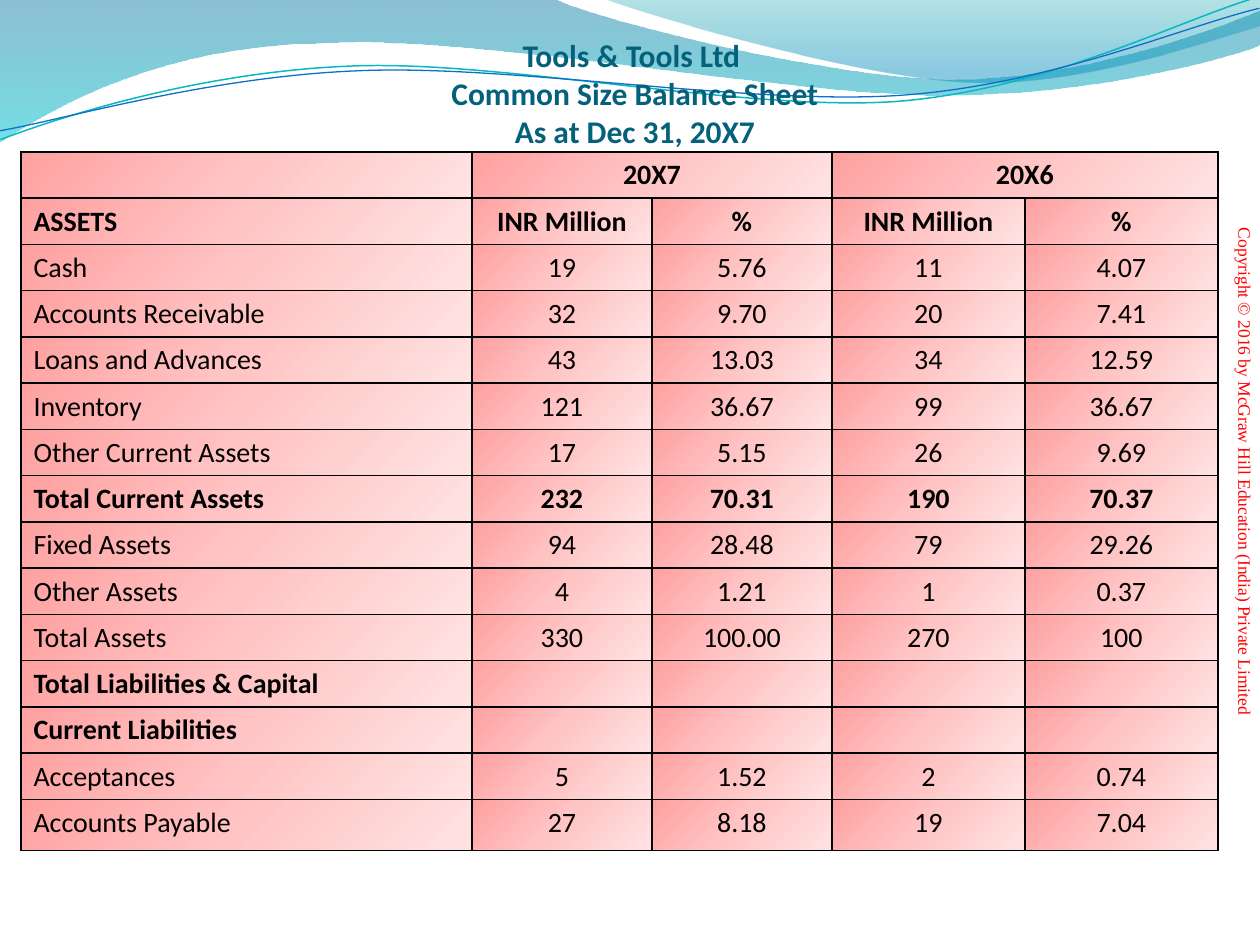
from dataclasses import dataclass

from lxml.etree import SubElement
from pptx import Presentation
from pptx.dml.color import RGBColor
from pptx.enum.text import MSO_ANCHOR, MSO_AUTO_SIZE, PP_ALIGN
from pptx.oxml.ns import qn
from pptx.util import Pt

PX = 914400 / 126


@dataclass(frozen=True)
class Theme:
    title: str = "04617B"
    text: str = "000000"
    copyright: str = "FF0000"
    teal_line: str = "0AB8BF"
    blue_line: str = "0F6FC6"
    # gradient stops: position %, colour, opacity %
    wide_wave: tuple = ((0, "0074A1", 45), (100, "00C6CF", 55))
    corner_wave: tuple = ((0, "00A1A9", 30), (80, "008BBF", 45))
    cell: tuple = ((0, "FFA0A0", 100), (50, "FFC5C5", 100), (100, "FFE3E3", 100))
    font: str = "Calibri"
    copyright_font: str = "Times New Roman"
    title_size: int = 18
    cell_size: int = 16
    copyright_size: int = 10


THEME = Theme()

# Each step is one point (straight) or three points (Bezier curve), in px.
WIDE_WAVE = [
    (0, 0), (554, -1),
    ((600, 21), (837, 79), (955, 79)), ((1075, 79), (1207, 33), (1260, 11)),
    (1261, 45),
    ((1239, 55), (1096, 96), (940, 95)), ((781, 95), (481, 35), (324, 43)),
    ((163, 45), (58, 105), (-1, 142)), (0, 0),
]
CORNER_WAVE = [
    (604, -1),
    ((641, 14), (859, 78), (969, 82)), ((1079, 87), (1211, 40), (1260, 26)),
    (1260, 0), (604, -1),
]
TEAL_LINE = [
    (-2, 110), ((59, 90), (199, 52), (350, 53)),
    ((499, 53), (745, 118), (896, 114)), ((1048, 109), (1184, 45), (1260, 27)),
]
BLUE_LINE = [
    (-2, 101), ((57, 94), (207, 57), (357, 58)),
    ((509, 58), (750, 112), (902, 108)), ((1052, 104), (1187, 52), (1262, 38)),
]
LINE_ROTATION = 357.3

TITLE = "Tools & Tools Ltd \nCommon Size Balance Sheet\nAs at Dec 31, 20X7"
COPYRIGHT = "Copyright © 2016 by McGraw Hill Education (India) Private Limited"
COLUMNS = [451, 180, 180, 193, 193]
ROW_HEIGHT, LAST_ROW_HEIGHT = 46, 51
BALANCE_SHEET = [
    ("", "20X7", "", "20X6", ""),
    ("ASSETS", "INR Million", "%", "INR Million", "%"),
    ("Cash", "19", "5.76", "11", "4.07"),
    ("Accounts Receivable", "32", "9.70", "20", "7.41"),
    ("Loans and Advances", "43", "13.03", "34", "12.59"),
    ("Inventory", "121", "36.67", "99", "36.67"),
    ("Other Current Assets", "17", "5.15", "26", "9.69"),
    ("Total Current Assets", "232", "70.31", "190", "70.37"),
    ("Fixed Assets", "94", "28.48", "79", "29.26"),
    ("Other Assets", "4", "1.21", "1", "0.37"),
    ("Total Assets", "330", "100.00", "270", "100"),
    ("Total Liabilities & Capital", "", "", "", ""),
    ("Current Liabilities", "", "", "", ""),
    ("Acceptances", "5", "1.52", "2", "0.74"),
    ("Accounts Payable", "27", "8.18", "19", "7.04"),
]
BOLD_ROWS = {0, 1, 7, 11, 12}


def px(n):
    return round(n * PX)


def place(shape, *box):
    shape.left, shape.top, shape.width, shape.height = map(px, box)


def style(p, font, size, color, bold=False, align=PP_ALIGN.CENTER):
    p.alignment = align
    p.font.name, p.font.size, p.font.bold = font, Pt(size), bold
    p.font.color.rgb = RGBColor.from_string(color)


def add_color(parent, color, opacity=100):
    clr = SubElement(parent, qn("a:srgbClr"), val=color)
    if opacity < 100:
        SubElement(clr, qn("a:alpha"), val=str(opacity * 1000))


def add_gradient(parent, stops, angle):
    grad = SubElement(parent, qn("a:gradFill"), rotWithShape="1")
    gs_list = SubElement(grad, qn("a:gsLst"))
    for pos, color, opacity in stops:
        add_color(SubElement(gs_list, qn("a:gs"), pos=str(pos * 1000)), color, opacity)
    SubElement(grad, qn("a:lin"), ang=str(angle * 60000), scaled="0")
    return grad


def is_curve(step):
    return isinstance(step[0], tuple)


def add_outline(s, steps, close):
    """Build the outline point by point, then join each curve's three points."""
    start, *rest = steps
    points = [pt for step in rest for pt in (step if is_curve(step) else (step,))]
    builder = s.shapes.build_freeform(*start, scale=PX)
    builder.add_line_segments(points, close=close)
    shape = builder.convert_to_shape()
    shape.shadow.inherit = False
    segments = iter(list(shape._element.iter(qn("a:lnTo"))))
    for step in rest:
        segment = next(segments)
        if is_curve(step):
            curve = SubElement(segment.getparent(), qn("a:cubicBezTo"))
            segment.addprevious(curve)
            for part in (segment, next(segments), next(segments)):
                curve.append(part[0])
                part.getparent().remove(part)
    return shape


def add_wave(s, steps, stops):
    shape = add_outline(s, steps, True)
    shape.line.fill.background()
    sp_pr = shape._element.spPr
    sp_pr.find(qn("a:custGeom")).addnext(add_gradient(sp_pr, stops, 90))


def add_wave_line(s, steps, color, width):
    shape = add_outline(s, steps, False)
    shape.rotation = LINE_ROTATION
    shape.fill.background()
    shape.line.color.rgb = RGBColor.from_string(color)
    shape.line.width = Pt(width)


def add_copyright(s):
    sp = s.shapes.add_textbox(0, 0, 0, 0)
    place(sp, 861, 440, 798, 63)
    sp.rotation = 90
    tf = sp.text_frame
    tf.word_wrap = True
    tf.vertical_anchor = MSO_ANCHOR.BOTTOM
    tf.text = COPYRIGHT
    style(tf.paragraphs[0], THEME.copyright_font, THEME.copyright_size, THEME.copyright)


def format_cell(cell, text, bold, align):
    p = cell.text_frame.paragraphs[0]
    if text:
        p.text = text
    else:
        SubElement(p._p, qn("a:endParaRPr"), sz=str(THEME.cell_size * 100))
    style(p, THEME.font, THEME.cell_size, THEME.text, bold, align)
    tc_pr = cell._tc.get_or_add_tcPr()
    for side in ("lnL", "lnR", "lnT", "lnB"):
        ln = SubElement(tc_pr, qn(f"a:{side}"), w=str(Pt(1)))
        add_color(SubElement(ln, qn("a:solidFill")), THEME.text)
    add_gradient(tc_pr, THEME.cell, 45)


def add_balance_sheet(s):
    rows, cols = len(BALANCE_SHEET), len(COLUMNS)
    height = ROW_HEIGHT * (rows - 1) + LAST_ROW_HEIGHT
    frame = s.shapes.add_table(rows, cols, px(21), px(152), px(sum(COLUMNS)), px(height))
    table = frame.table
    table.first_row = table.horz_banding = False
    for column, width in zip(table.columns, COLUMNS):
        column.width = px(width)
    for r, values in enumerate(BALANCE_SHEET):
        table.rows[r].height = px(LAST_ROW_HEIGHT if r == rows - 1 else ROW_HEIGHT)
        for c, text in enumerate(values):
            align = PP_ALIGN.CENTER if c else PP_ALIGN.LEFT
            format_cell(table.cell(r, c), text, r in BOLD_ROWS, align)
    for c in (1, 3):
        table.cell(0, c).merge(table.cell(0, c + 1))


def set_title(s):
    title = s.shapes.title
    place(title, 73, 30, 1124, 127)
    tf = title.text_frame
    tf.text = TITLE
    tf.word_wrap = True
    tf.auto_size = MSO_AUTO_SIZE.SHAPE_TO_FIT_TEXT
    tf.vertical_anchor = MSO_ANCHOR.TOP
    for p in tf.paragraphs:
        style(p, THEME.font, THEME.title_size, THEME.title, True)
    s.shapes._spTree.append(title._element)  # in front of the waves


def main():
    prs = Presentation()
    prs.slide_width, prs.slide_height = px(1260), px(945)
    s = prs.slides.add_slide(prs.slide_layouts[5])
    add_wave(s, WIDE_WAVE, THEME.wide_wave)
    add_wave(s, CORNER_WAVE, THEME.corner_wave)
    add_wave_line(s, TEAL_LINE, THEME.teal_line, 0.85)
    add_wave_line(s, BLUE_LINE, THEME.blue_line, 0.75)
    add_copyright(s)
    add_balance_sheet(s)
    set_title(s)
    prs.save("out.pptx")


if __name__ == "__main__":
    main()
